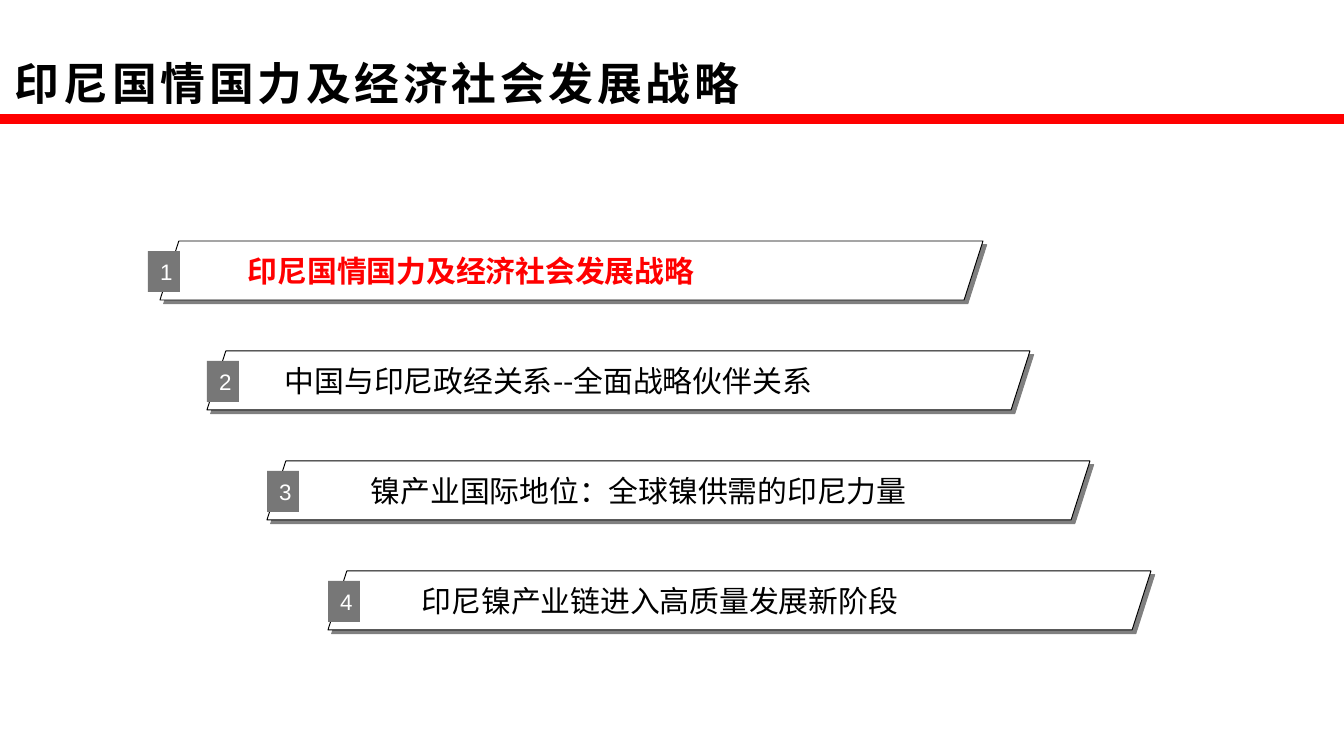
"""Build the agenda slide with four stepped, numbered bars."""
from dataclasses import dataclass

from lxml import etree
from pptx import Presentation
from pptx.dml.color import RGBColor
from pptx.enum.shapes import MSO_CONNECTOR, MSO_SHAPE
from pptx.enum.text import MSO_ANCHOR, MSO_AUTO_SIZE, PP_ALIGN
from pptx.oxml.ns import qn
from pptx.util import Pt

STRAIGHT = MSO_CONNECTOR.STRAIGHT
PARALLELOGRAM, RECTANGLE = MSO_SHAPE.PARALLELOGRAM, MSO_SHAPE.RECTANGLE
MIDDLE, TOP = MSO_ANCHOR.MIDDLE, MSO_ANCHOR.TOP
LEFT, CENTER = PP_ALIGN.LEFT, PP_ALIGN.CENTER

TITLE = "印尼国情国力及经济社会发展战略"
AGENDA = [
    {"topic": TITLE, "bar": 160, "badge": 148, "text": 248},
    {"topic": "中国与印尼政经关系--全面战略伙伴关系", "bar": 207, "badge": 207, "text": 285},
    {"topic": "镍产业国际地位：全球镍供需的印尼力量", "bar": 267, "badge": 267, "text": 371},
    {"topic": "印尼镍产业链进入高质量发展新阶段", "bar": 328, "badge": 328, "text": 422},
]
CURRENT = 1
FIRST_TOP, PITCH = 241, 110
BAR_WIDTH, BAR_HEIGHT = 823, 59
BADGE_WIDTH, BADGE_HEIGHT = 32, 41
NUMBER_WIDTH, NUMBER_HEIGHT = 11, 27
TOPIC_WIDTH, TOPIC_HEIGHT = 728, 36
SLIDE_WIDTH, SLIDE_HEIGHT = 1344, 756


@dataclass(frozen=True)
class Theme:
    black: str = "000000"
    white: str = "FFFFFF"
    red: str = "FF0000"
    badge: str = "777777"
    shadow: str = "808080"
    cjk: str = "Noto Sans CJK SC"
    latin: str = "Arial"
    title_size: int = 24
    topic_size: int = 16
    number_size: int = 12


THEME = Theme()


def px(length):
    return round(length * 914400 / 134.4)


def box(*lengths):
    return [px(length) for length in lengths]


def color(value):
    return RGBColor.from_string(value)


def write(frame, text, font, size, fill, bold=False, align=LEFT, anchor=MIDDLE, insets=(0, 0, 0, 0)):
    frame.auto_size = MSO_AUTO_SIZE.NONE
    frame.vertical_anchor = anchor
    frame.margin_left, frame.margin_top, frame.margin_right, frame.margin_bottom = box(*insets)
    frame.text = text
    paragraph = frame.paragraphs[0]
    paragraph.alignment = align
    run = paragraph.runs[0]
    run.font.name = font
    run.font.size = Pt(size)
    run.font.bold = bold
    run.font.color.rgb = color(fill)
    properties = run.font._element
    etree.SubElement(properties, qn("a:ea"), typeface=font)
    return paragraph, properties


def add_block(shapes, kind, place, fill):
    block = shapes.add_shape(kind, *place)
    block.shadow.inherit = False
    block.fill.solid()
    block.fill.fore_color.rgb = color(fill)
    block.line.fill.background()
    return block


def add_bar(shapes, place):
    bar = add_block(shapes, PARALLELOGRAM, place, THEME.white)
    bar.adjustments[0] = 0.32
    bar.line.color.rgb = color(THEME.black)
    bar.line.width = Pt(0.5)
    effects = bar._element.spPr.find(qn("a:effectLst"))
    shadow = etree.SubElement(effects, qn("a:outerShdw"), dist=str(Pt(2.8)),
                              dir="2700000", algn="ctr", rotWithShape="0")
    etree.SubElement(shadow, qn("a:srgbClr"), val=THEME.shadow)


def add_text(shapes, place, wrap, *args, **kwargs):
    frame = shapes.add_textbox(*place).text_frame
    frame.word_wrap = wrap
    return write(frame, *args, **kwargs)[0]


def add_item(shapes, number, item):
    top = FIRST_TOP + (number - 1) * PITCH
    badge_top = top + 10
    current = number == CURRENT
    add_bar(shapes, box(item["bar"], top, BAR_WIDTH, BAR_HEIGHT))
    add_block(shapes, RECTANGLE, box(item["badge"], badge_top, BADGE_WIDTH, BADGE_HEIGHT), THEME.badge)
    label = add_text(shapes, box(item["badge"] + 13, badge_top + 8, NUMBER_WIDTH, NUMBER_HEIGHT), False,
                     str(number), THEME.latin, THEME.number_size, THEME.white,
                     align=CENTER, anchor=TOP)
    label.line_spacing = Pt(14)
    add_text(shapes, box(item["text"], top + 12, TOPIC_WIDTH, TOPIC_HEIGHT), True,
             item["topic"], THEME.cjk, THEME.topic_size,
             THEME.red if current else THEME.black, bold=current)


def main():
    deck = Presentation()
    deck.slide_width, deck.slide_height = box(SLIDE_WIDTH, SLIDE_HEIGHT)
    slide = deck.slides.add_slide(deck.slide_layouts[5])
    shapes = slide.shapes

    title = shapes.title
    title.left, title.top, title.width, title.height = box(0, 47, SLIDE_WIDTH, 71)
    properties = write(title.text_frame, TITLE, THEME.cjk, THEME.title_size, THEME.black,
                       bold=True, insets=(15, 5, 11, 5))[1]
    properties.set("spc", "200")

    rule = shapes.add_connector(STRAIGHT, *box(0, 119, SLIDE_WIDTH, 119))
    rule.line.color.rgb = color(THEME.red)
    rule.line.width = Pt(5)
    etree.SubElement(rule._element.spPr, qn("a:effectLst"))

    for number, item in enumerate(AGENDA, 1):
        add_item(shapes, number, item)
    deck.save("out.pptx")


if __name__ == "__main__":
    main()
